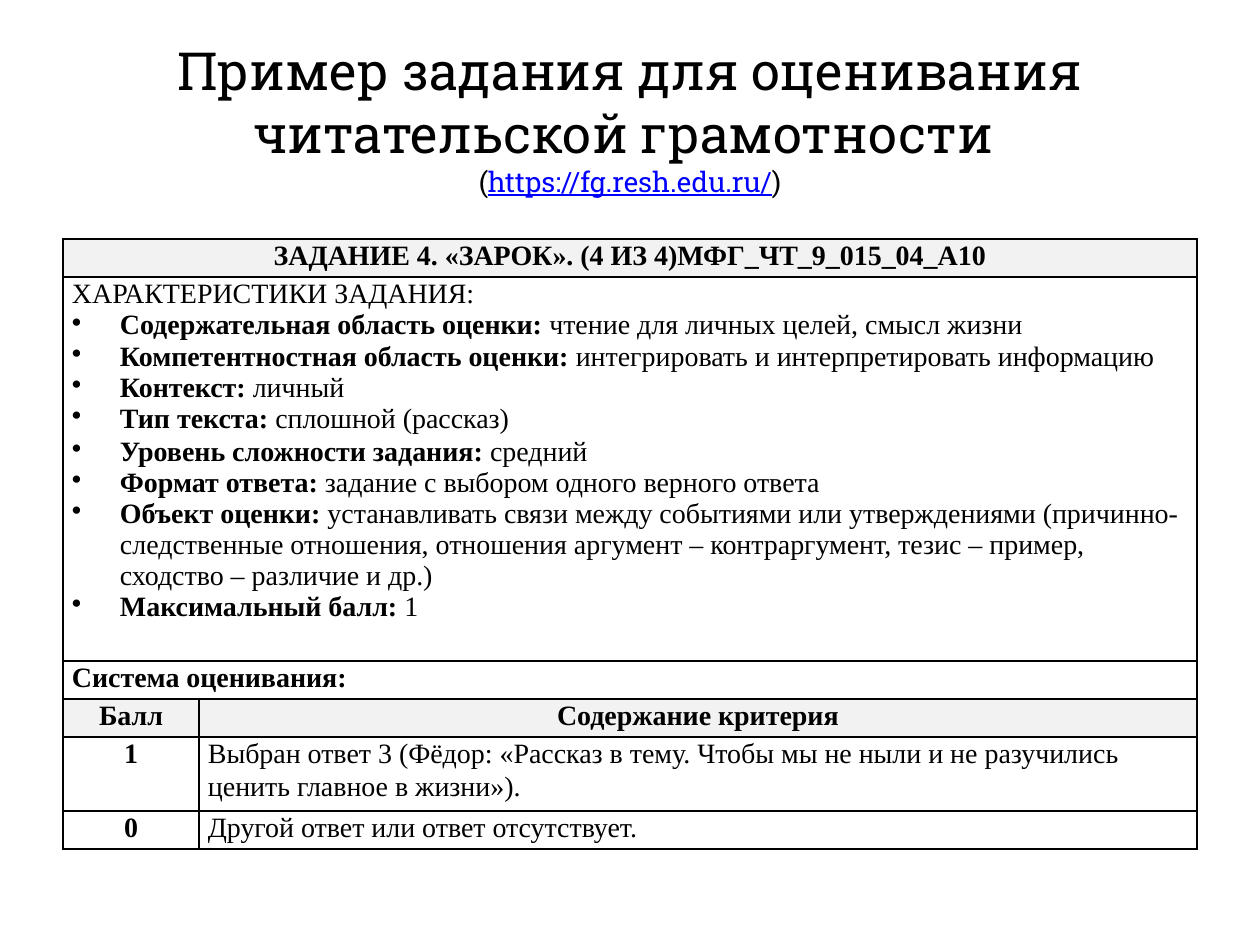
from dataclasses import dataclass
from lxml import etree
from pptx import Presentation
from pptx.dml.color import RGBColor
from pptx.enum.text import MSO_ANCHOR, PP_ALIGN
from pptx.oxml import parse_xml
from pptx.oxml.ns import nsdecls, qn
from pptx.util import Pt

CENTER, LEFT = PP_ALIGN.CENTER, PP_ALIGN.LEFT
TOP = MSO_ANCHOR.TOP
PX = 914400 / 126


@dataclass(frozen=True)
class Theme:
    ink: RGBColor = RGBColor(0, 0, 0)
    link: RGBColor = RGBColor(0, 0, 255)
    paper: RGBColor = RGBColor(255, 255, 255)
    shade: RGBColor = RGBColor(242, 242, 242)
    title_font: str = "Roboto Slab"
    body_font: str = "Times New Roman"
    title_size: int = 30
    body_size: int = 16
    line_spacing: float = 1.06


theme = Theme()


def px(value):
    return round(value * PX)


def style(paragraph, name, size, align):
    paragraph.alignment = align
    paragraph.font.name = name
    paragraph.font.size = Pt(size)
    paragraph.font.color.rgb = theme.ink


presentation = Presentation()
presentation.slide_width, presentation.slide_height = px(1260), px(945)
slide = presentation.slides.add_slide(presentation.slide_layouts[6])

title = slide.shapes.add_textbox(px(0), px(32), px(1260), px(174)).text_frame
title.word_wrap = True
title_lines = [
    (["Пример задания для оценивания"], theme.title_size),
    (["читательской грамотности "], theme.title_size),
    (["(", "https://fg.resh.edu.ru/", ")"], theme.body_size),
]
for index, (texts, size) in enumerate(title_lines):
    paragraph = title.add_paragraph() if index else title.paragraphs[0]
    style(paragraph, theme.title_font, size, CENTER)
    for text in texts:
        run = paragraph.add_run()
        run.text = text
        if text.startswith("https"):
            run.font.underline = True
            run.font.color.rgb = theme.link

characteristics = [
    ("Содержательная область оценки:", " чтение для личных целей, смысл жизни"),
    ("Компетентностная область оценки:", " интегрировать и интерпретировать информацию"),
    ("Контекст:", " личный"),
    ("Тип текста:", " сплошной (рассказ)"),
    ("Уровень сложности задания:", " средний"),
    ("Формат ответа:", " задание с выбором одного верного ответа"),
    ("Объект оценки:", " устанавливать связи между событиями или утверждениями "
     "(причинно-следственные отношения, отношения аргумент – контраргумент, "
     "тезис – пример, сходство – различие и др.)"),
    ("Максимальный балл:", " 1"),
]
spaced_labels = {"", "Уровень сложности задания:"}

task_rows = [
    [[("ЗАДАНИЕ 4. «ЗАРОК». (4 ИЗ 4)МФГ_ЧТ_9_015_04_А10", "")]],
    [[("", "ХАРАКТЕРИСТИКИ ЗАДАНИЯ:")] + characteristics],
    [[("Система оценивания:", "")]],
    [[("Балл", "")], [("Содержание критерия", "")]],
    [[("1", "")], [("", "Выбран ответ 3 (Фёдор: «Рассказ в тему. Чтобы мы не ныли "
                    "и не разучились ценить главное в жизни»).")]],
    [[("0", "")], [("", "Другой ответ или ответ отсутствует.")]],
]
row_heights = [38, 384, 38, 38, 74, 38]
column_widths = [136, 998]
shaded_rows = {0, 3}

table = slide.shapes.add_table(
    len(row_heights), len(column_widths),
    px(63), px(239), px(sum(column_widths)), px(sum(row_heights))).table
table.first_row = table.horz_banding = False
for column, width in zip(table.columns, column_widths):
    column.width = px(width)

for row_index, (contents, height) in enumerate(zip(task_rows, row_heights)):
    row = table.rows[row_index]
    row.height = px(height)
    shaded = row_index in shaded_rows
    for cell in row.cells:
        cell.margin_left = cell.margin_right = px(9)
        cell.margin_top = cell.margin_bottom = 0
        cell.vertical_anchor = TOP
        properties = cell._tc.get_or_add_tcPr()
        for side in ("lnL", "lnR", "lnT", "lnB"):
            properties.append(parse_xml(
                f'<a:{side} {nsdecls("a")} w="{Pt(1)}"><a:solidFill>'
                f'<a:srgbClr val="{theme.ink}"/></a:solidFill></a:{side}>'))
        cell.fill.solid()
        cell.fill.fore_color.rgb = theme.shade if shaded else theme.paper
    if len(contents) == 1:
        row.cells[0].merge(row.cells[1])

    for column_index, lines in enumerate(contents):
        frame = row.cells[column_index].text_frame
        score = len(contents) == 2 and column_index == 0
        for index, (label, detail) in enumerate(lines):
            paragraph = frame.add_paragraph() if index else frame.paragraphs[0]
            bulleted = index > 0
            if bulleted:
                settings = paragraph._p.get_or_add_pPr()
                settings.set("marL", str(px(48)))
                settings.set("indent", str(px(-48)))
                etree.SubElement(settings, qn("a:buChar")).set("char", "•")
            if not bulleted or label in spaced_labels:
                paragraph.line_spacing = theme.line_spacing
            style(paragraph, theme.body_font, theme.body_size,
                  CENTER if shaded or score else LEFT)
            for text, bold in ((label, True), (detail, False)):
                if text:
                    run = paragraph.add_run()
                    run.text = text
                    run.font.bold = bold

presentation.save("out.pptx")
